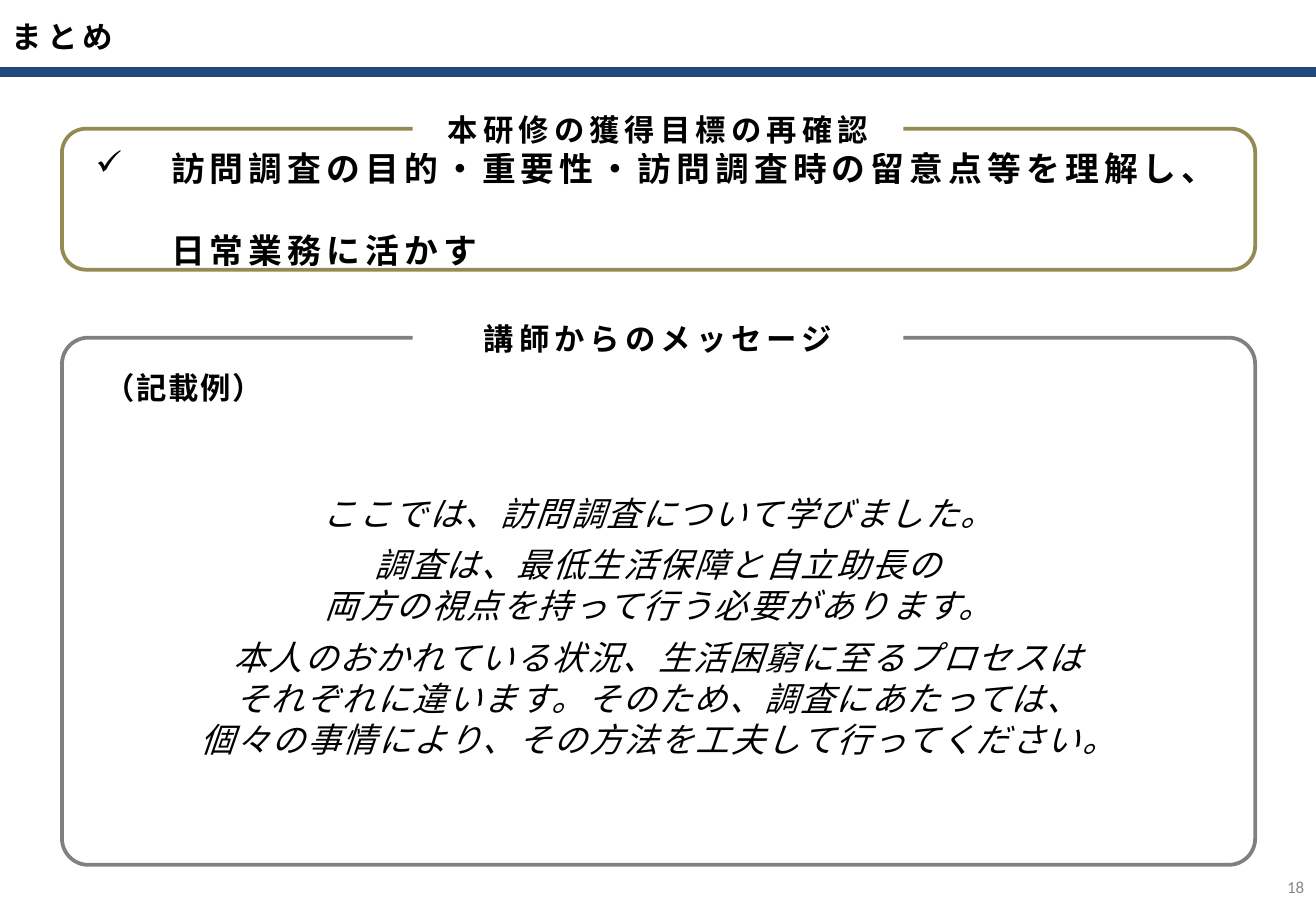
from lxml import etree
from pptx import Presentation
from pptx.dml.color import RGBColor
from pptx.enum.shapes import MSO_CONNECTOR, MSO_SHAPE
from pptx.enum.text import MSO_ANCHOR, PP_ALIGN
from pptx.oxml.ns import qn
from pptx.util import Inches, Pt

STRAIGHT = MSO_CONNECTOR.STRAIGHT
RECTANGLE, ROUNDED = MSO_SHAPE.RECTANGLE, MSO_SHAPE.ROUNDED_RECTANGLE
MIDDLE = MSO_ANCHOR.MIDDLE
LEFT, CENTER, RIGHT = PP_ALIGN.LEFT, PP_ALIGN.CENTER, PP_ALIGN.RIGHT

# The grid has 100 columns and 100 rows
WIDTH, HEIGHT = Inches(10.83), Inches(7.5)
COLUMN, ROW = WIDTH / 100, HEIGHT / 100
HEADER_ROWS = 7.87
LABEL_ROWS, LABEL_COLUMNS = 5.33, 37.3
FRAME_LEFT, FRAME_COLUMNS = 4.71, 90.67

JAPANESE, LATIN = "Noto Sans CJK JP", "Calibri"
LINE_FACTOR = 1.22
COLORS = {
    "navy": "1F497D",
    "olive": "948A54",
    "gray": "808080",
    "number": "898989",
    "black": "000000",
    "white": "FFFFFF",
}

GOAL = "訪問調査の目的・重要性・訪問調査時の留意点等を理解し、\n日常業務に活かす"
MESSAGE = [
    "ここでは、訪問調査について学びました。",
    "調査は、最低生活保障と自立助長の\n両方の視点を持って行う必要があります。",
    "本人のおかれている状況、生活困窮に至るプロセスは\n"
    "それぞれに違います。そのため、調査にあたっては、\n"
    "個々の事情により、その方法を工夫して行ってください。",
]


def color(name):
    return RGBColor.from_string(COLORS[name])


def on_grid(left, top, columns, rows):
    return (round(left * COLUMN), round(top * ROW),
            round(columns * COLUMN), round(rows * ROW))


def add_shape(page, kind, area, fill=None, line=None):
    shape = page.shapes.add_shape(kind, *on_grid(*area))
    shape.shadow.inherit = False
    if fill:
        shape.fill.solid()
        shape.fill.fore_color.rgb = color(fill)
    else:
        shape.fill.background()
    if line:
        shape.line.color.rgb = color(line)
        shape.line.width = Pt(2.25)
    else:
        shape.line.fill.background()
    return shape


def add_box(page, area):
    return page.shapes.add_textbox(*on_grid(*area))


def write(box, *texts, size=18, bold=False, italic=False, font=JAPANESE,
          tint="black", align=LEFT, tracking=0, lines=1, gap=0):
    """Write each text as a paragraph; a newline becomes a line break."""
    frame = box.text_frame
    frame.word_wrap = True
    frame.vertical_anchor = MIDDLE
    for index, text in enumerate(texts):
        para = frame.add_paragraph() if index else frame.paragraphs[0]
        para.alignment = align
        para.line_spacing = Pt(size * LINE_FACTOR * lines)
        para.space_before = Pt(gap if index else 0)
        for number, part in enumerate(text.split("\n")):
            if number:
                para.add_line_break()
            span = para.add_run()
            span.text = part
            span.font.size = Pt(size)
            span.font.bold, span.font.italic = bold, italic
            span.font.name = font
            span.font.color.rgb = color(tint)
            properties = span.font._element
            properties.set("spc", str(tracking * 100))
            east_asian = etree.SubElement(properties, qn("a:ea"))
            east_asian.set("typeface", font)


def add_bullet(para, mark, indent):
    properties = para._p.get_or_add_pPr()
    properties.set("marL", str(indent))
    properties.set("indent", str(-indent))
    bullet = etree.SubElement(properties, qn("a:buChar"))
    bullet.set("char", mark)


def add_bar(page):
    height = round(HEADER_ROWS * ROW)
    bar = page.shapes.add_connector(STRAIGHT, 0, height, WIDTH, height)
    bar.line.color.rgb = color("navy")
    bar.line.width = Pt(6)
    etree.SubElement(bar._element.spPr, qn("a:effectLst"))


def add_section(page, label, top, rows, line, rounding):
    """Draw a rounded frame whose label covers the middle of its top edge."""
    frame = add_shape(page, ROUNDED, (FRAME_LEFT, top, FRAME_COLUMNS, rows), line=line)
    frame.adjustments[0] = rounding
    area = (50 - LABEL_COLUMNS / 2, top - LABEL_ROWS / 2, LABEL_COLUMNS, LABEL_ROWS)
    box = add_shape(page, RECTANGLE, area, fill="white")
    write(box, label, bold=True, align=CENTER, tracking=3)


def main():
    deck = Presentation()
    deck.slide_width, deck.slide_height = WIDTH, HEIGHT
    page = deck.slides.add_slide(deck.slide_layouts[6])

    # Header and page number
    add_bar(page)
    write(add_box(page, (0, 0, 100, HEADER_ROWS)), "まとめ", bold=True, tracking=3)
    write(add_box(page, (96.2, 94.67, 3.8, LABEL_ROWS)), "18",
          size=10, font=LATIN, tint="number", align=RIGHT)

    # Goal of the training, beneath its frame and label
    goal = add_box(page, (6.37, 10.67, 87.35, 20))
    write(goal, GOAL, size=20, bold=True, tracking=3, lines=2)
    add_bullet(goal.text_frame.paragraphs[0], "✓", Inches(0.62))
    add_section(page, "本研修の獲得目標の再確認", 14.13, 15.47, "olive", 0.17)

    # Message from the lecturer
    add_section(page, "講師からのメッセージ", 37.07, 57.87, "gray", 0.05)
    write(add_box(page, (6.65, 39.87, 14.59, LABEL_ROWS)), "（記載例）",
          bold=True, align=CENTER, tracking=1)
    write(add_box(page, (6.19, 42.67, 87.72, 52)), *MESSAGE,
          size=20, italic=True, align=CENTER, tracking=1, gap=6)

    deck.save("out.pptx")


if __name__ == "__main__":
    main()
